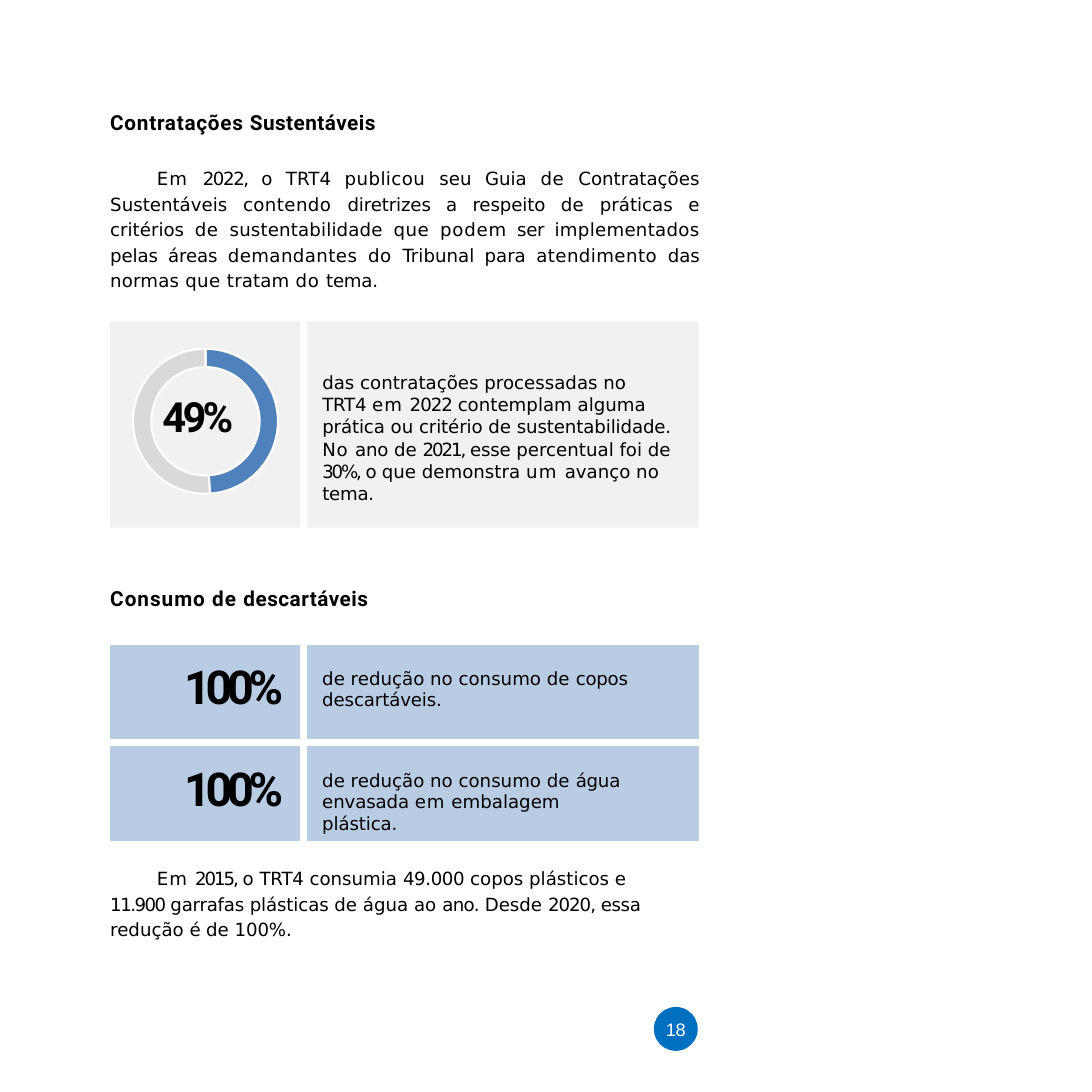
"""Build the page on sustainable procurement and disposable consumption."""
from lxml import etree
from pptx import Presentation
from pptx.chart.data import CategoryChartData
from pptx.dml.color import RGBColor
from pptx.enum import chart as ch, shapes, text
from pptx.oxml import parse_xml
from pptx.oxml.ns import nsdecls, qn
from pptx.util import Inches, Pt

BLACK = RGBColor(0x00, 0x00, 0x00)
WHITE = RGBColor(0xFF, 0xFF, 0xFF)
CARD_GREY = RGBColor(0xF1, 0xF1, 0xF1)
RING_BLUE = RGBColor(0x4F, 0x81, 0xBC)
RING_GREY = RGBColor(0xD9, 0xD9, 0xD9)
ROW_BLUE = RGBColor(0xB8, 0xCC, 0xE3)
PAGE_BLUE = RGBColor(0x00, 0x6F, 0xC0)
LEFT = 1.18


def write(paragraph, runs, size, face="DejaVu Sans", bold=False, color=BLACK):
    """Fill a paragraph with (words, letter spacing) runs in one font."""
    for words, spacing in runs:
        run = paragraph.add_run()
        run.text = words
        if spacing:
            run._r.get_or_add_rPr().set("spc", str(round(spacing * 100)))
    font = paragraph.font
    font.size, font.name, font.bold = Pt(size), face, bold
    font.color.rgb = color


def set_frame(frame, left=0, top=0, right=0):
    """Wrap the text and set its insets in inches."""
    frame.word_wrap = True
    frame.vertical_anchor = text.MSO_ANCHOR.TOP
    frame.margin_left, frame.margin_top = Inches(left), Inches(top)
    frame.margin_right, frame.margin_bottom = Inches(right), 0
    return frame


deck = Presentation()
deck.slide_width = deck.slide_height = Inches(11.69)
slide = deck.slides.add_slide(deck.slide_layouts[6])

guide = set_frame(slide.shapes.add_textbox(
    Inches(LEFT), Inches(1.16), Inches(6.31), Inches(1.98)).text_frame, top=0.01)
write(guide.paragraphs[0], [("Contratações", 0.6), (" Sustentáveis", 0.4)], 16, "Roboto", True)
guide_body = guide.add_paragraph()
guide_body.alignment = text.PP_ALIGN.JUSTIFY
guide_body.space_before = Pt(23)
guide_body.line_spacing = 1.17
guide_body._p.get_or_add_pPr().set("indent", str(Inches(0.5)))
write(guide_body, [
    ("Em ", 0.8), ("2022, ", -1.1), ("o TRT4 ", 0), ("publicou ", 0.3), ("seu Guia ", 0),
    ("de ", 0.4), ("Contratações Sustentáveis ", 0), ("contendo ", 0.3),
    ("diretrizes a respeito ", -0.1), ("de ", 0.2), ("práticas e critérios ", 0),
    ("de ", 0.4), ("sustentabilidade ", 0.1), ("que ", 0.3), ("podem", 0.6), (" ser ", -0.3),
    ("implementados ", 0.2), ("pelas áreas ", -0.1), ("demandantes do ", 0.3),
    ("Tribunal para ", 0), ("atendimento ", 0.3), ("das ", -0.1), ("normas ", 0.1),
    ("que ", 0.3), ("tratam ", 0.1), ("do ", 0.5), ("tema.", -0.2)], 14)

cards = []
for left, width in ((LEFT, 2.03), (3.29, 4.19)):
    card = slide.shapes.add_shape(shapes.MSO_SHAPE.RECTANGLE, Inches(left), Inches(3.44),
                                  Inches(width), Inches(2.21))
    card.shadow.inherit = False
    card.fill.solid()
    card.fill.fore_color.rgb = CARD_GREY
    card.line.fill.background()
    cards.append(card)

share_note = set_frame(cards[1].text_frame, left=0.16, top=0.53, right=0.26).paragraphs[0]
share_note.alignment = text.PP_ALIGN.LEFT
share_note.line_spacing = 1.02
write(share_note, [
    ("das contratações processadas no ", 0), ("TRT4 ", -0.2), ("em ", 0.7), ("2022 ", -0.8),
    ("contemplam alguma ", 0), ("prática ", -0.1), ("ou ", 0), ("critério ", -0.1), ("de ", 0),
    ("sustentabilidade. ", -0.1), ("No ", 0.6), ("ano ", -0.2), ("de ", 0), ("2021, ", -1.6),
    ("esse ", -0.2), ("percentual foi de ", 0), ("30%, ", -1.7), ("o ", -0.5),
    ("que demonstra ", 0), ("um ", 0.9), ("avanço no ", 0), ("tema.", -0.2)], 14)

shares = CategoryChartData()
shares.categories = ["Com critério", "Sem critério"]
shares.add_series("Contratações", (49, 51))
ring = slide.shapes.add_chart(ch.XL_CHART_TYPE.DOUGHNUT, Inches(1.23), Inches(3.54),
                              Inches(1.94), Inches(1.94), shares).chart
ring.has_legend = ring.has_title = False
ring.font.name, ring.font.size, ring.font.color.rgb = "DejaVu Sans", Pt(14), BLACK
ring_plot = ring.plots[0]
ring_plot.vary_by_categories = True
ring_plot.has_data_labels = False
for index, color in enumerate((RING_BLUE, RING_GREY)):
    part = ring_plot.series[0].points[index].format
    part.fill.solid()
    part.fill.fore_color.rgb = color
    part.line.color.rgb, part.line.width = WHITE, Pt(1.56)
chart_root = ring._chartSpace
hole_size = chart_root.find(".//" + qn("c:holeSize"))
if hole_size is not None:
    hole_size.set("val", "75")
plot_area = chart_root.find(".//" + qn("c:plotArea"))
for old_layout in plot_area.findall(qn("c:layout")):
    plot_area.remove(old_layout)
plot_area.insert(0, parse_xml(
    f'<c:layout {nsdecls("c")}><c:manualLayout><c:layoutTarget val="inner"/>'
    '<c:xMode val="edge"/><c:yMode val="edge"/><c:x val="0.1"/><c:y val="0.1"/>'
    '<c:w val="0.8"/><c:h val="0.8"/></c:manualLayout></c:layout>'))
chart_root.find(qn("c:chart")).addnext(parse_xml(
    f'<c:spPr {nsdecls("c", "a")}><a:noFill/><a:ln><a:noFill/></a:ln></c:spPr>'))

hole = slide.shapes.add_shape(shapes.MSO_SHAPE.OVAL, Inches(1.62), Inches(3.93),
                              Inches(1.16), Inches(1.16))
hole.shadow.inherit = False
hole.fill.solid()
hole.fill.fore_color.rgb = CARD_GREY
hole.line.color.rgb, hole.line.width = WHITE, Pt(1.56)

share = set_frame(slide.shapes.add_textbox(
    Inches(LEFT), Inches(4.18), Inches(2.03), Inches(0.56)).text_frame, left=0.56, top=0.01)
write(share.paragraphs[0], [("49%", -2.9)], 32, "Roboto", True)

disposables = set_frame(slide.shapes.add_textbox(
    Inches(LEFT), Inches(6.26), Inches(3.08), Inches(0.29)).text_frame, top=0.01)
write(disposables.paragraphs[0], [("Consumo de ", 0.8), ("descartáveis", 0.4)], 16, "Roboto", True)

reductions = [
    (0.18, 0.25, [("de redução no consumo de ", 0), ("copos ", -0.2), ("descartáveis.", -0.1)]),
    (0.22, 0.29, [("de redução no consumo de ", 0), ("água ", -0.2), ("envasada ", -0.1),
                  ("em", 0.7), (" embalagem ", 0), ("plástica.", -0.1)]),
]
table = slide.shapes.add_table(2, 2, Inches(LEFT), Inches(6.9), Inches(6.3), Inches(2.1)).table
table.first_row = table.horz_banding = False
table._tbl.tblPr.find(qn("a:tableStyleId")).text = "{2D5ABB26-0587-4C30-8999-92F81FD0307C}"
table.columns[0].width, table.columns[1].width = Inches(2.07), Inches(4.23)
for row, (figure_top, note_top, note_runs) in enumerate(reductions):
    table.rows[row].height = Inches(1.05)
    figure, note = table.cell(row, 0), table.cell(row, 1)
    figure.margin_top, figure.margin_right = Inches(figure_top), Inches(0.22)
    note.margin_top, note.margin_right = Inches(note_top), Inches(0.7)
    figure.margin_left, note.margin_left = 0, Inches(0.2)
    figure_line, note_line = (cell.text_frame.paragraphs[0] for cell in (figure, note))
    figure_line.alignment = text.PP_ALIGN.RIGHT
    write(figure_line, [("100%", -4.1)], 36, "Roboto", True)
    note_line.line_spacing = 1.02
    write(note_line, note_runs, 14)
    for column, cell in enumerate((figure, note)):
        cell.margin_bottom = 0
        cell.fill.solid()
        cell.fill.fore_color.rgb = ROW_BLUE
        inner_edges = ("lnR", "lnL")[column], ("lnB", "lnT")[row]
        for position, edge in enumerate(inner_edges):
            border = etree.Element(qn("a:" + edge), w=str(Pt(6)))
            fill = etree.SubElement(border, qn("a:solidFill"))
            etree.SubElement(fill, qn("a:srgbClr"), val=str(WHITE))
            cell._tc.get_or_add_tcPr().insert(position, border)

history = set_frame(slide.shapes.add_textbox(
    Inches(LEFT), Inches(9.24), Inches(5.92), Inches(0.85)).text_frame, top=0.01)
history_body = history.paragraphs[0]
history_body.line_spacing = 1.17
history_body._p.get_or_add_pPr().set("indent", str(Inches(0.5)))
write(history_body, [
    ("Em ", 0.8), ("2015, ", -1.6), ("o ", 0), ("TRT4 ", -0.2), ("consumia ", 0),
    ("49.000 ", -0.3), ("copos plásticos e ", 0), ("11.900 ", -1.2), ("garrafas ", -0.2),
    ("plásticas ", -0.1), ("de água ao ", 0), ("ano. ", -0.5), ("Desde ", 0), ("2020, ", -0.8),
    ("essa ", -0.3), ("redução ", 0), ("é ", -0.5), ("de ", 0), ("100%.", -0.1)], 14)

page_badge = slide.shapes.add_shape(shapes.MSO_SHAPE.OVAL, Inches(7), Inches(10.78),
                                    Inches(0.47), Inches(0.47))
page_badge.shadow.inherit = False
page_badge.fill.solid()
page_badge.fill.fore_color.rgb = PAGE_BLUE
page_badge.line.fill.background()
page_frame = set_frame(page_badge.text_frame)
page_frame.word_wrap = False
page_frame.vertical_anchor = text.MSO_ANCHOR.MIDDLE
page_frame.paragraphs[0].alignment = text.PP_ALIGN.CENTER
write(page_frame.paragraphs[0], [("18", -0.2)], 14, "Arial", color=WHITE)

deck.save("out.pptx")
